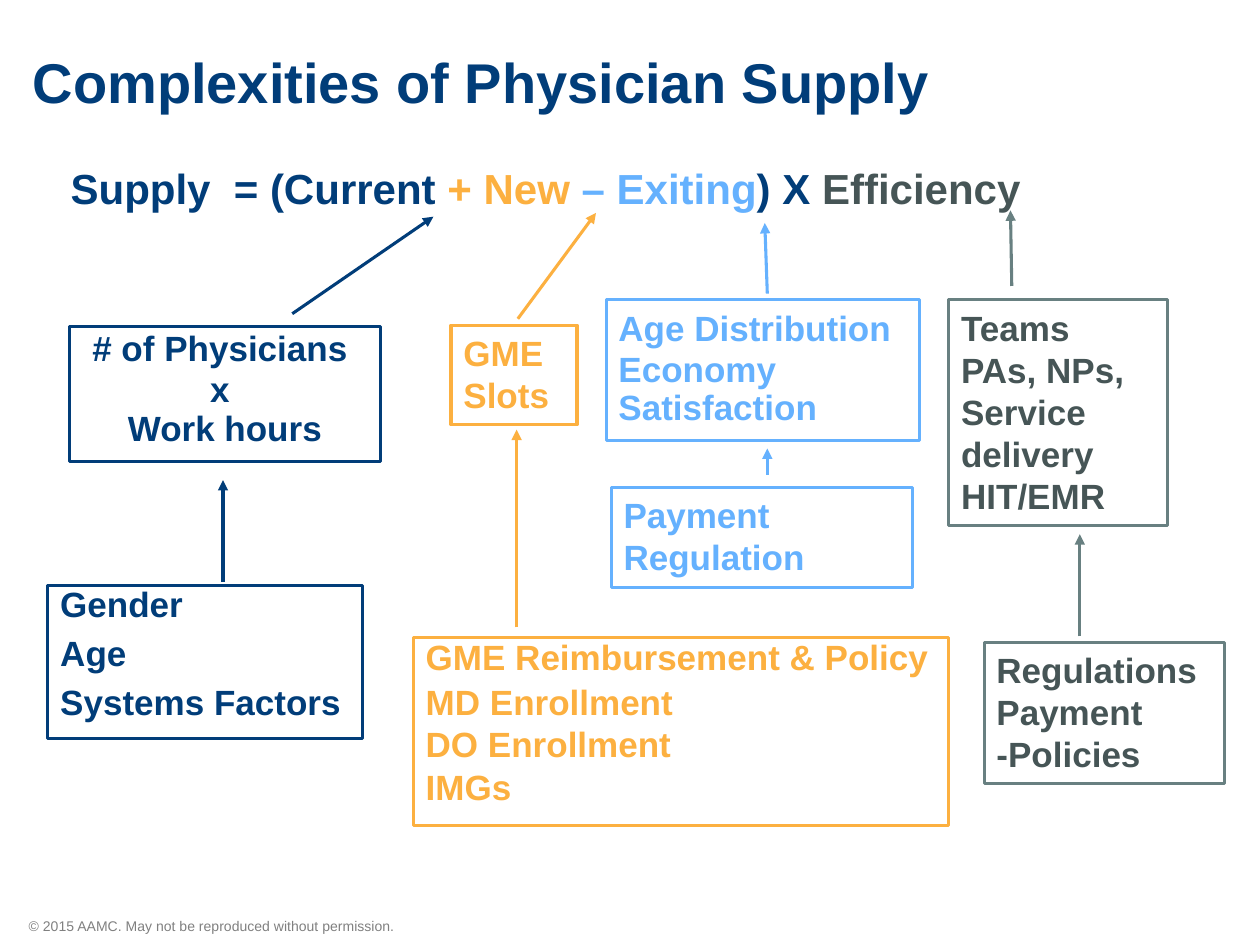
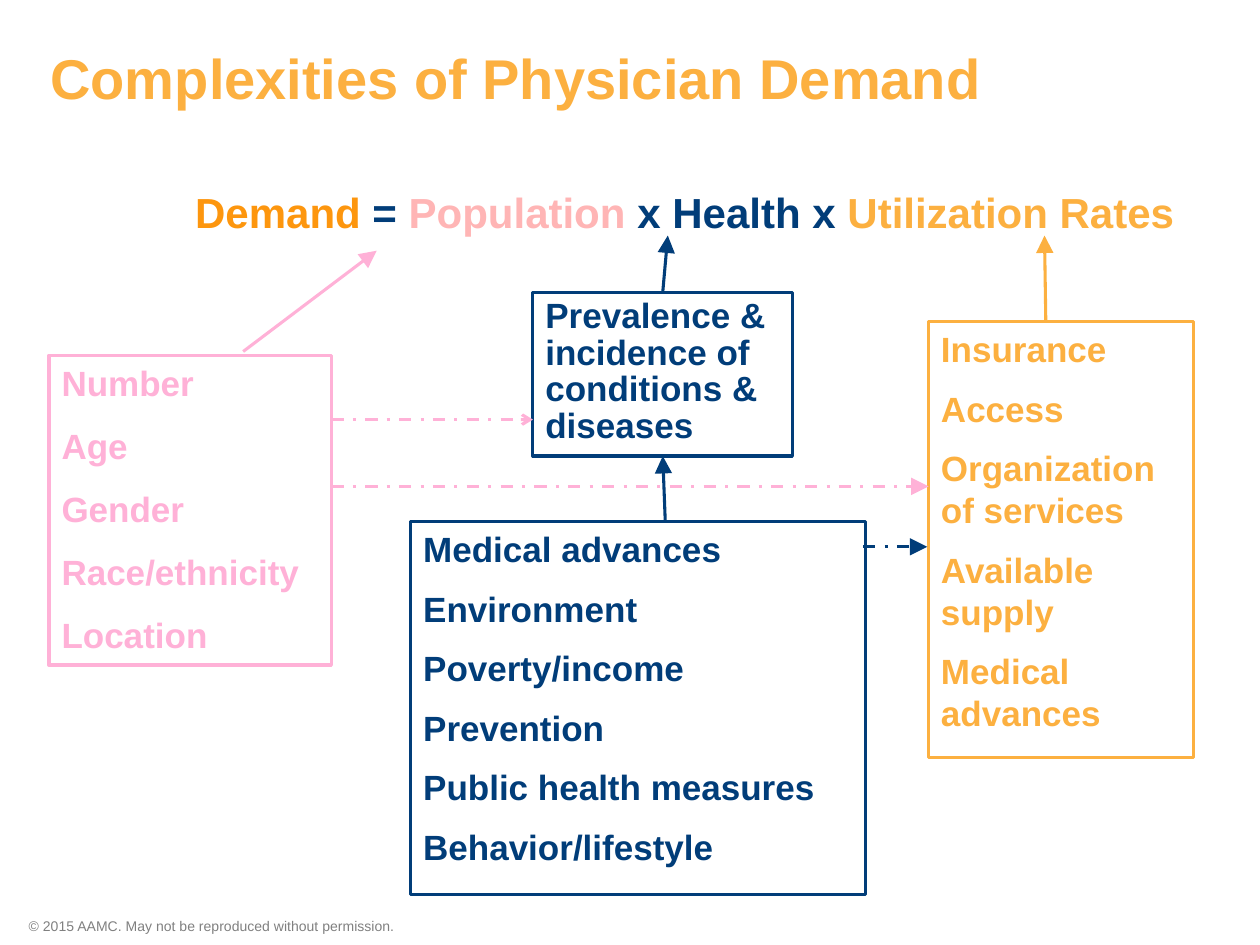
from lxml import etree
from pptx import Presentation
from pptx.dml.color import RGBColor
from pptx.enum.dml import MSO_LINE_DASH_STYLE as Dash
from pptx.enum.shapes import MSO_CONNECTOR as Connector, MSO_SHAPE as Shape
from pptx.enum.text import MSO_ANCHOR as Anchor, MSO_AUTO_SIZE as AutoSize, PP_ALIGN as Align
from pptx.oxml.ns import qn
from pptx.util import Pt

PX = 9144  # EMU per px, 100 px to the inch
COLOURS = {
    "navy": "013D79", "gold": "FCB040", "sky": "65B1FE", "slate": "465556",
    "teal": "688081", "pink": "FFB1D7", "rose": "FFB5B5", "orange": "FD960E",
    "grey": "808080",
}
FONT = "Arial"
FOOTER = "© 2015 AAMC. May not be reproduced without permission."


def rgb(name):
    return RGBColor.from_string(COLOURS[name])


class Deck:
    """Holds the shared style and the slide being built."""

    def __init__(self):
        self.presentation = Presentation()
        self.presentation.slide_width = 1000 * PX
        self.presentation.slide_height = 750 * PX
        self.slide = None

    def new_slide(self):
        layout = self.presentation.slide_layouts[1]
        self.slide = self.presentation.slides.add_slide(layout)
        box = self.slide.shapes.add_textbox(13 * PX, 723 * PX, 617 * PX, 23 * PX)
        box.text_frame.word_wrap = True
        self.add_run(box.text_frame.paragraphs[0], FOOTER, 8, "grey", bold=False)

    def add_run(self, paragraph, text, size, colour, bold=True):
        run = paragraph.add_run()
        run.text = text
        font = run.font
        font.name, font.size, font.bold = FONT, Pt(size), bold
        font.color.rgb = rgb(colour)

    def place(self, shape, left, top, width, height, anchor):
        """Move a placeholder and return its only paragraph."""
        shape.left, shape.top = left * PX, top * PX
        shape.width, shape.height = width * PX, height * PX
        frame = shape.text_frame
        frame.margin_left = frame.margin_top = 0
        frame.margin_right = frame.margin_bottom = 0
        frame.word_wrap, frame.auto_size = True, AutoSize.NONE
        frame.vertical_anchor = anchor
        return frame.paragraphs[0]

    def title(self, text, colour, *bounds):
        paragraph = self.place(self.slide.shapes.title, *bounds, Anchor.BOTTOM)
        paragraph.alignment, paragraph.line_spacing = Align.LEFT, 0.85
        self.add_run(paragraph, text, 32, colour)

    def formula(self, terms, *bounds):
        paragraph = self.place(self.slide.placeholders[1], *bounds, Anchor.TOP)
        properties = paragraph._p.get_or_add_pPr()
        properties.set("marL", "0")
        properties.set("indent", "0")
        etree.SubElement(properties, qn("a:buNone"))
        paragraph.alignment, paragraph.line_spacing = Align.CENTER, 0.88
        paragraph.space_before = Pt(0)
        for text, colour in terms:
            self.add_run(paragraph, text, 24, colour)

    def box(self, bounds, colour, lines, text_colour=None, first_spacing=1.0,
            spacing=1.0, gap=10, align=Align.LEFT, border=1.75):
        left, top, width, height = (value * PX for value in bounds)
        shape = self.slide.shapes.add_shape(Shape.RECTANGLE, left, top, width, height)
        shape.shadow.inherit = False
        shape.fill.background()
        shape.line.color.rgb = rgb(colour)
        shape.line.width = Pt(border)
        frame = shape.text_frame
        frame.word_wrap, frame.vertical_anchor = True, Anchor.TOP
        for index, line in enumerate(lines):
            paragraph = frame.add_paragraph() if index else frame.paragraphs[0]
            paragraph.alignment = align
            paragraph.line_spacing = spacing if index else first_spacing
            paragraph.space_before = Pt(gap if index else 0)
            self.add_run(paragraph, line, 20, text_colour or colour)
        return shape

    def arrow(self, start, end, colour, head="triangle", size="med", dashed=False):
        points = [value * PX for value in (*start, *end)]
        connector = self.slide.shapes.add_connector(Connector.STRAIGHT, *points)
        line = connector.line
        line.color.rgb, line.width = rgb(colour), Pt(1.75)
        if dashed:
            line.dash_style = Dash.DASH_DOT
        etree.SubElement(line._get_or_add_ln(), qn("a:tailEnd"), type=head, w=size, len=size)
        etree.SubElement(connector._element.spPr, qn("a:effectLst"))
        return connector


def supply_slide(deck):
    deck.new_slide()
    deck.title("Complexities of Physician Supply", "navy", 26, 9, 1000, 82)
    deck.formula([("Supply  = (Current ", "navy"), ("+ New ", "gold"), ("– Exiting", "sky"),
                  (") X ", "navy"), ("Efficiency", "slate")], 13, 134, 840, 72)

    # Current physicians
    deck.box((55, 259, 247, 107), "navy", ["# of Physicians ", "x ", "Work hours"],
             first_spacing=0.85, spacing=0.5, align=Align.CENTER)
    deck.box((38, 465, 250, 121), "navy", ["Gender", "Age", "Systems Factors"],
             first_spacing=0.75, spacing=0.75)

    # New physicians
    deck.box((358, 258, 100, 79), "gold", ["GME Slots"])
    deck.box((328, 506, 425, 149), "gold",
             ["GME Reimbursement & Policy", "MD Enrollment", "DO Enrollment", "IMGs"],
             first_spacing=0.8, spacing=0.6)

    # Exiting physicians
    deck.box((481, 238, 249, 112), "sky", ["Age Distribution", "Economy", "Satisfaction"],
             spacing=0.5)
    deck.box((485, 387, 239, 79), "sky", ["Payment", "Regulation"], gap=0)

    # Efficiency
    deck.box((753, 238, 174, 179), "teal",
             ["Teams", "PAs, NPs,", "Service delivery", "HIT/EMR"], "slate", gap=0)
    deck.box((781, 510, 191, 112), "teal", ["Regulations", "Payment -Policies"], "slate", gap=0)

    # Arrows up to each term
    for start, end, colour in [
        ((232, 249), (344, 172), "navy"), ((177, 462), (177, 381), "navy"),
        ((411, 253), (473, 169), "gold"), ((410, 498), (410, 341), "gold"),
        ((609, 233), (607, 177), "sky"), ((609, 377), (609, 356), "sky"),
        ((803, 227), (802, 167), "teal"), ((857, 505), (857, 424), "teal"),
    ]:
        deck.arrow(start, end, colour)


def demand_slide(deck):
    deck.new_slide()
    deck.title("Complexities of Physician Demand", "gold", 40, 20, 960, 68)
    deck.formula([("Demand", "orange"), (" = ", "navy"), ("Population ", "rose"),
                  ("x Health x ", "navy"), ("Utilization Rates ", "gold")], 96, 153, 904, 54)

    # Factors behind each term
    deck.box((39, 282, 224, 246), "pink",
             ["Number", "Age", "Gender", "Race/ethnicity", "Location"], gap=12, border=2)
    deck.box((326, 414, 361, 296), "navy",
             ["Medical advances", "Environment", "Poverty/income", "Prevention",
              "Public health measures", "Behavior/lifestyle"])
    prevalence = deck.box((423, 232, 206, 130), "navy",
                          ["Prevalence & incidence of conditions & diseases"],
                          first_spacing=0.88)
    deck.box((737, 255, 210, 346), "gold",
             ["Insurance", "Access", "Organization of services", "Available supply",
              "Medical advances"])

    # Arrows up to the formula
    deck.arrow((193, 279), (299, 199), "pink", size="lg")
    deck.arrow((830, 255), (829, 187), "gold", size="lg")
    deck.arrow((530, 232), (530, 187), "navy", size="lg").begin_connect(prevalence, 0)
    deck.arrow((528, 414), (528, 362), "navy", size="lg").end_connect(prevalence, 2)

    # Indirect influences
    deck.arrow((685, 434), (736, 434), "navy", size="lg", dashed=True)
    deck.arrow((263, 386), (737, 386), "pink", size="lg", dashed=True)
    deck.arrow((263, 333), (423, 333), "pink", head="arrow", dashed=True)


def main():
    deck = Deck()
    supply_slide(deck)
    demand_slide(deck)
    deck.presentation.save("out.pptx")


if __name__ == "__main__":
    main()
